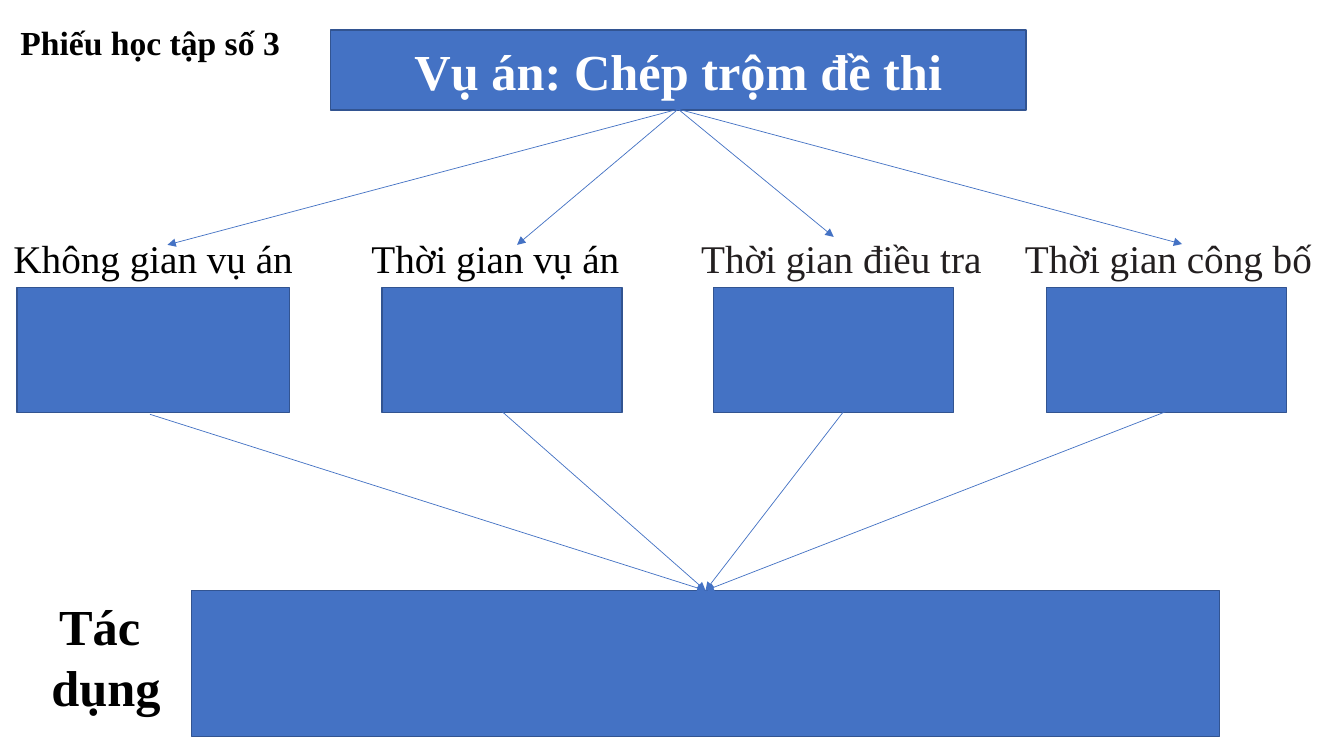
from dataclasses import dataclass

from lxml import etree
from pptx import Presentation
from pptx.dml.color import RGBColor
from pptx.enum.shapes import MSO_CONNECTOR, MSO_SHAPE
from pptx.enum.text import MSO_ANCHOR, MSO_AUTO_SIZE, PP_ALIGN
from pptx.oxml.ns import qn
from pptx.util import Cm, Pt

RECT = MSO_SHAPE.RECTANGLE
LINE = MSO_CONNECTOR.STRAIGHT
FIT = MSO_AUTO_SIZE.SHAPE_TO_FIT_TEXT
MIDDLE = MSO_ANCHOR.MIDDLE
LEFT, CENTER = PP_ALIGN.LEFT, PP_ALIGN.CENTER


@dataclass(frozen=True)
class Theme:
    font: str = "Times New Roman"
    blue: RGBColor = RGBColor(0x44, 0x72, 0xC4)
    edge: RGBColor = RGBColor(0x32, 0x54, 0x91)
    white: RGBColor = RGBColor(0xFF, 0xFF, 0xFF)
    black: RGBColor = RGBColor(0, 0, 0)
    ink: RGBColor = RGBColor(0x23, 0x1F, 0x20)
    big: int = 36
    mid: int = 28
    small: int = 24


THEME = Theme()

BOX_TOP, BOX_HIGH = 7.24, 3.15
TAG_TOP, TAG_HIGH = 5.77, 1.45
TOP_HUB = (17.09, 2.75)
LOW_HUB = (17.78, 14.88)

# label, colour, alignment, label (left, width), box (left, width),
# end of the arrow from the title, start of the arrow to the effect
BRANCHES = [
    ("Không gian vụ án", THEME.black, CENTER, (0.05, 7.62), (0.43, 6.86),
     (4.22, 6.17), (3.78, 10.44)),
    ("Thời gian vụ án", THEME.black, CENTER, (9.07, 6.83), (9.63, 6.05),
     (13.03, 6.17), (12.65, 10.37)),
    ("Thời gian điều tra", THEME.ink, LEFT, (17.42, 7.62), (17.98, 6.05),
     (21.01, 5.97), (21.26, 10.37)),
    ("Thời gian công bố", THEME.ink, LEFT, (25.58, 7.8), (26.37, 6.05),
     (29.79, 6.15), (29.39, 10.37)),
]


def write(frame, lines, size, color, bold=False, align=CENTER):
    for i, line in enumerate(lines):
        para = frame.paragraphs[0] if i == 0 else frame.add_paragraph()
        para.text = line
        para.alignment = align
        font = para.font
        font.name, font.size, font.bold = THEME.font, Pt(size), bold
        font.color.rgb = color


def add_box(slide, *place):
    box = slide.shapes.add_shape(RECT, *map(Cm, place))
    box.shadow.inherit = False
    box.fill.solid()
    box.fill.fore_color.rgb = THEME.blue
    box.line.color.rgb = THEME.edge
    box.line.width = Pt(1)
    return box


def add_label(slide, place, lines, size, color, bold=False, align=CENTER):
    frame = slide.shapes.add_textbox(*map(Cm, place)).text_frame
    frame.word_wrap = False
    frame.auto_size = FIT
    write(frame, lines, size, color, bold, align)


def add_arrow(slide, start, end):
    arrow = slide.shapes.add_connector(LINE, *map(Cm, start + end))
    arrow.line.color.rgb = THEME.blue
    arrow.line.width = Pt(0.5)
    tip = etree.SubElement(arrow.line._get_or_add_ln(), qn("a:tailEnd"))
    tip.set("type", "triangle")
    etree.SubElement(arrow._element.spPr, qn("a:effectLst"))


def main():
    deck = Presentation()
    deck.slide_width, deck.slide_height = Cm(33.87), Cm(19.05)
    slide = deck.slides.add_slide(deck.slide_layouts[6])

    title = add_box(slide, 8.33, 0.76, 17.53, 2.01).text_frame
    title.vertical_anchor = MIDDLE
    write(title, ["Vụ án: Chép trộm đề thi"], THEME.big, THEME.white, True)
    add_box(slide, 4.83, 14.88, 25.91, 3.68)

    for text, color, align, tag, box, end, start in BRANCHES:
        add_box(slide, box[0], BOX_TOP, box[1], BOX_HIGH)
        add_label(slide, (tag[0], TAG_TOP, tag[1], TAG_HIGH), [text],
                  THEME.mid, color, align=align)
        add_arrow(slide, TOP_HUB, end)
        add_arrow(slide, start, LOW_HUB)

    add_label(slide, (1.02, 14.88, 3.3, 3.33), ["Tác ", "dụng"],
              THEME.big, THEME.black, True)
    add_label(slide, (0.23, 0.43, 7.11, 1.27), ["Phiếu học tập số 3"],
              THEME.small, THEME.black, True)
    deck.save("out.pptx")


if __name__ == "__main__":
    main()
